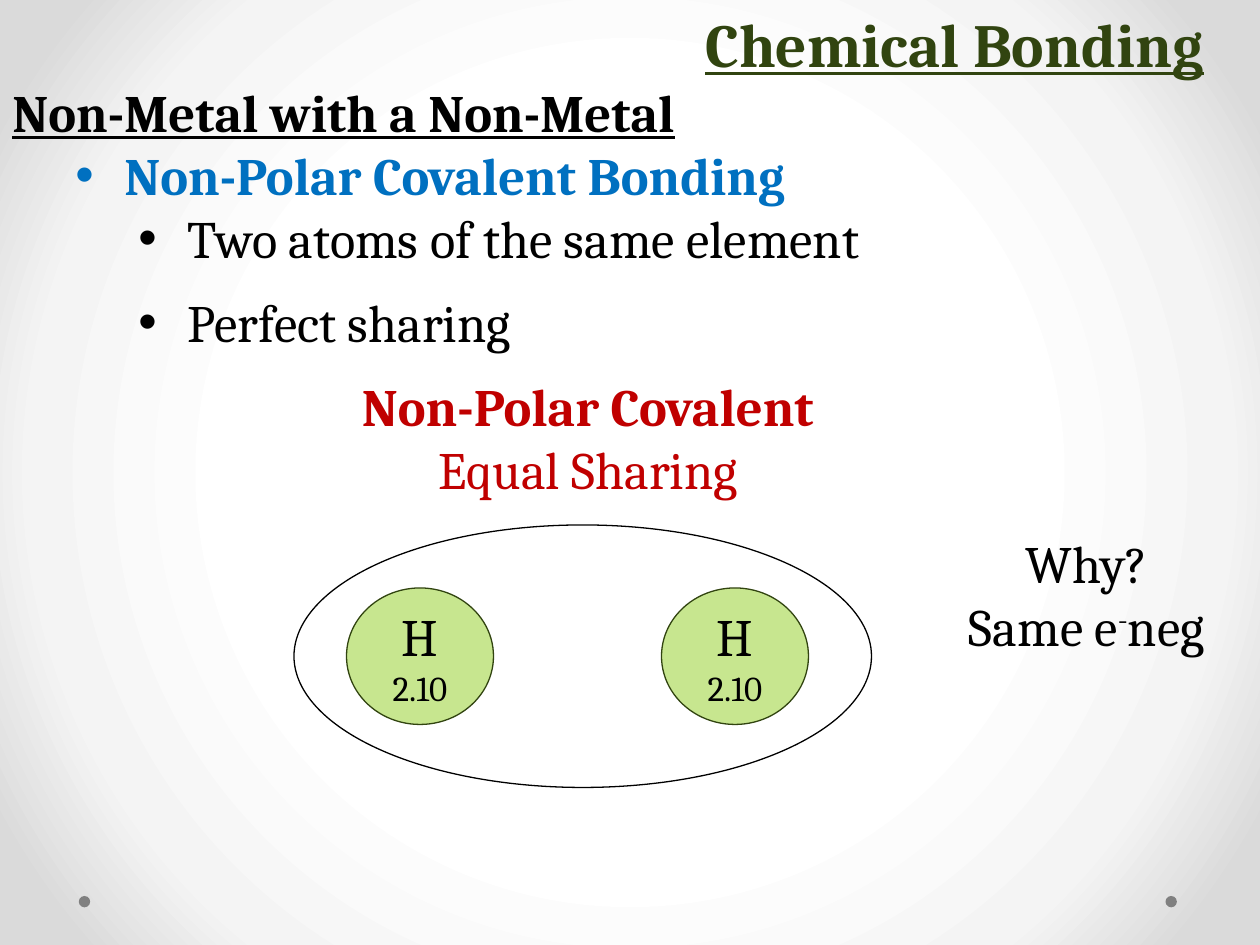
from pptx import Presentation
from pptx.dml.color import RGBColor
from pptx.enum import shapes, text
from pptx.oxml import parse_xml
from pptx.util import Pt

BLACK = RGBColor(0x00, 0x00, 0x00)
GREEN = RGBColor(0x31, 0x44, 0x10)
LIME = RGBColor(0xC7, 0xE6, 0x8F)
BLUE = RGBColor(0x00, 0x70, 0xC0)
RED = RGBColor(0xC0, 0x00, 0x00)
GREY = RGBColor(0x80, 0x80, 0x80)
STOPS = ((50, "FFFFFF"), (76, "F4F4F4"), (92, "DADADA"))

FONT = "Cambria"
MID = text.PP_ALIGN.CENTER
NS = ('xmlns:a="http://schemas.openxmlformats.org/drawingml/2006/main" '
      'xmlns:p="http://schemas.openxmlformats.org/presentationml/2006/main"')


def shade(slide):
    """Give the slide a circular gradient background."""
    stops = "".join(
        f'<a:gs pos="{pos * 1000}"><a:srgbClr val="{tone}"/></a:gs>'
        for pos, tone in STOPS)
    slide.element.cSld.insert(0, parse_xml(
        f'<p:bg {NS}><p:bgPr><a:gradFill rotWithShape="1">'
        f'<a:gsLst>{stops}</a:gsLst><a:path path="circle">'
        '<a:fillToRect l="50000" t="50000" r="50000" b="50000"/></a:path>'
        '</a:gradFill><a:effectLst/></p:bgPr></p:bg>'))


def add_run(para, words, size=30, color=BLACK, raised=False, **style):
    run = para.add_run()
    run.text = words
    font = run.font
    form = {"name": FONT, "size": Pt(size), "bold": False, **style}
    for key, value in form.items():
        setattr(font, key, value)
    font.color.rgb = color
    if raised:
        run._r.get_or_add_rPr().set("baseline", "30000")


def add_bullet(para, left):
    props = para._p.get_or_add_pPr()
    props.set("marL", str(Pt(left)))
    props.set("indent", str(Pt(-28)))
    props.append(parse_xml(f'<a:buFont {NS} typeface="Arial"/>'))
    props.append(parse_xml(f'<a:buChar {NS} char="•"/>'))


def add_para(frame, first=False, align=None, after=0):
    para = frame.paragraphs[0] if first else frame.add_paragraph()
    para.alignment = align
    para.space_after = Pt(after)
    return para


def add_box(slide, *place):
    frame = slide.shapes.add_textbox(*map(Pt, place)).text_frame
    frame.word_wrap = True
    return frame


def add_oval(slide, place, fill=None, line=None):
    oval = slide.shapes.add_shape(shapes.MSO_SHAPE.OVAL, *map(Pt, place))
    oval.shadow.inherit = False
    if fill is None:
        oval.fill.background()
    else:
        oval.fill.solid()
        oval.fill.fore_color.rgb = fill
    if line is None:
        oval.line.fill.background()
    else:
        oval.line.color.rgb = line
        oval.line.width = Pt(0.75)
    return oval


def add_atom(slide, left):
    frame = add_oval(slide, (left, 336, 84, 78), LIME, GREEN).text_frame
    frame.word_wrap = False
    frame.vertical_anchor = text.MSO_ANCHOR.MIDDLE
    add_run(add_para(frame, True, MID), "H")
    add_run(add_para(frame, align=MID), "2.10", 20)


def add_notes(slide):
    """Write the heading and its bulleted points."""
    frame = add_box(slide, 0, 42, 720, 165)
    add_run(add_para(frame, True), "Non-Metal with a Non-Metal",
            bold=True, underline=True)
    para = add_para(frame)
    add_bullet(para, 64)
    add_run(para, "Non-Polar Covalent Bonding", color=BLUE, bold=True)
    for words in ("Two atoms of the same element", "Perfect sharing"):
        para = add_para(frame, after=12)
        para.level = 1
        add_bullet(para, 100)
        add_run(para, words)


def main():
    deck = Presentation()
    deck.slide_width, deck.slide_height = Pt(720), Pt(540)
    slide = deck.slides.add_slide(deck.slide_layouts[6])
    shade(slide)
    for left in (666, 45):
        add_oval(slide, (left, 512, 6.5, 6.5), GREY)

    title = add_box(slide, 396, 0, 324, 50)
    add_run(add_para(title, True), "Chemical Bonding", 35, GREEN,
            bold=True, underline=True)
    add_notes(slide)

    for left in (198, 378):
        add_atom(slide, left)
    add_oval(slide, (168, 300, 330, 150), line=BLACK)

    label = add_box(slide, 174, 210, 324, 80)
    add_run(add_para(label, True, MID), "Non-Polar Covalent",
            color=RED, bold=True)
    add_run(add_para(label, align=MID), "Equal Sharing", color=RED)

    reason = add_box(slide, 522, 300, 198, 80)
    add_run(add_para(reason, True, MID), "Why?")
    para = add_para(reason, align=MID)
    add_run(para, "Same e")
    add_run(para, "-", raised=True)
    add_run(para, "neg")
    deck.save("out.pptx")


if __name__ == "__main__":
    main()
